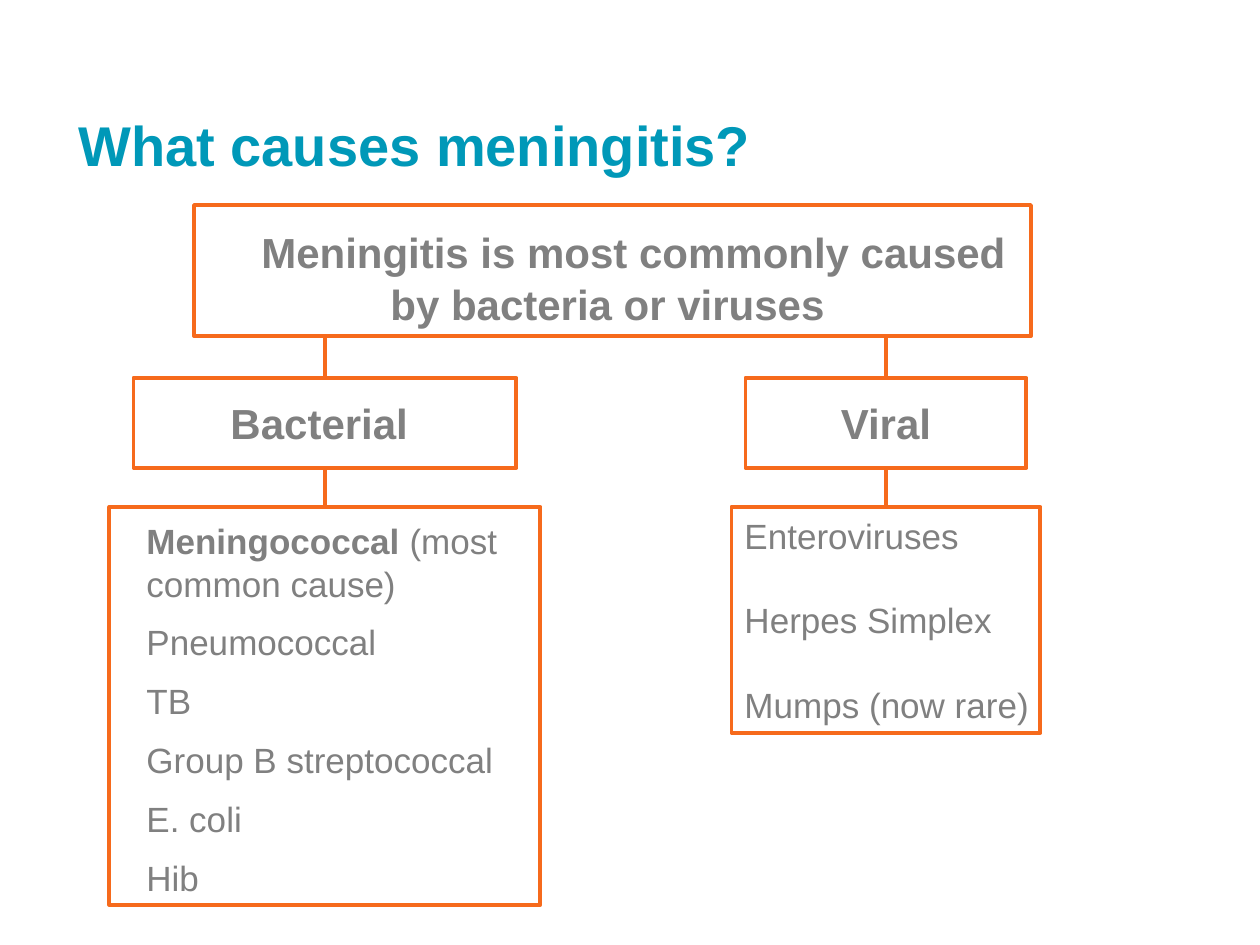
from lxml import etree
from pptx import Presentation
from pptx import util as u
from pptx.dml.color import RGBColor
from pptx.enum import shapes, text
from pptx.oxml import ns

TEAL = RGBColor(0x00, 0x98, 0xB8)
ORANGE = RGBColor(0xF6, 0x6A, 0x1C)
GREY = RGBColor(0x80, 0x80, 0x80)
FONT = "Arial"
TOP, LEFT, BOTTOM = 0, 1, 2

STATEMENT = "Meningitis is most commonly caused by bacteria or viruses"
BACTERIA = ["Meningococcal (most common cause)", "Pneumococcal", "TB",
            "Group B streptococcal", "E. coli", "Hib"]
VIRUSES = ["Enteroviruses", "Herpes Simplex", "Mumps (now rare)"]


def px(length):
    return u.Emu(round(length * 914400 / 126))


def style(run, size, color=GREY, bold=False):
    run.font.name = FONT
    run.font.size = u.Pt(size)
    run.font.bold = bold
    run.font.color.rgb = color


def set_margins(frame, left, top, right, bottom):
    frame.margin_left, frame.margin_top = px(left), px(top)
    frame.margin_right, frame.margin_bottom = px(right), px(bottom)


def add_title(slide, box, wording):
    frame = slide.shapes.add_textbox(*map(px, box)).text_frame
    frame.word_wrap = True
    frame.vertical_anchor = text.MSO_ANCHOR.MIDDLE
    frame.text = wording
    style(frame.paragraphs[0].runs[0], 32, TEAL, True)


def add_frame(slide, box):
    """Add an empty orange-outlined rectangle."""
    outline = slide.shapes.add_shape(shapes.MSO_SHAPE.RECTANGLE, *map(px, box))
    outline.shadow.inherit = False
    outline.fill.background()
    outline.line.color.rgb = ORANGE
    outline.line.width = u.Pt(2.25)
    outline.text_frame.word_wrap = True
    return outline


def add_heading(slide, box, wording):
    heading = add_frame(slide, box)
    frame = heading.text_frame
    frame.vertical_anchor = text.MSO_ANCHOR.MIDDLE
    frame.text = wording
    paragraph = frame.paragraphs[0]
    paragraph.alignment = text.PP_ALIGN.CENTER
    style(paragraph.runs[0], 24, bold=True)
    return heading


def add_statement(slide, box):
    """Add the top box, whose first line is indented."""
    statement = add_heading(slide, box, STATEMENT)
    frame = statement.text_frame
    frame.vertical_anchor = text.MSO_ANCHOR.TOP
    set_margins(frame, 13, 19, 23, 6)
    paragraph = frame.paragraphs[0]
    paragraph.line_spacing = u.Pt(30)
    properties = paragraph._p.get_or_add_pPr()
    properties.set("marL", "0")
    properties.set("indent", str(px(52)))


def add_causes(slide, box, causes, margins, gap):
    """Add a boxed list; gap is the space between items in points."""
    listing = add_frame(slide, box)
    frame = listing.text_frame
    frame.vertical_anchor = text.MSO_ANCHOR.TOP
    set_margins(frame, *margins)
    frame.text = "\n".join(causes)
    for index, paragraph in enumerate(frame.paragraphs):
        paragraph.alignment = text.PP_ALIGN.LEFT
        paragraph.line_spacing = u.Pt(24)
        paragraph.space_before = u.Pt(gap if index else 0)
        style(paragraph.runs[0], 20)
    return listing


def embolden_first_word(listing):
    paragraph = listing.text_frame.paragraphs[0]
    first, rest = paragraph.text.split(" ", 1)
    paragraph.runs[0].text = first + " "
    style(paragraph.runs[0], 20, bold=True)
    remainder = paragraph.add_run()
    remainder.text = rest
    style(remainder, 20)


def add_link(slide, x, top, bottom):
    link = slide.shapes.add_connector(
        shapes.MSO_CONNECTOR.STRAIGHT, px(x), px(top), px(x), px(bottom))
    link.line.color.rgb = ORANGE
    link.line.width = u.Pt(2.25)
    etree.SubElement(link._element.spPr, ns.qn("a:effectLst"))
    return link


def add_branch(slide, center, heading_width, wording, list_size, causes, margins, gap):
    """Add a heading and its list around a centre line, linked from above."""
    list_width, list_height = list_size
    heading = add_heading(
        slide, (center - heading_width / 2, 378, heading_width, 90), wording)
    listing = add_causes(
        slide, (center - list_width / 2, 507, list_width, list_height), causes, margins, gap)
    add_link(slide, center, 336, 378).end_connect(heading, TOP)
    lower = add_link(slide, center, 468, 507)
    lower.begin_connect(heading, BOTTOM)
    lower.end_connect(listing, TOP)
    return listing


def main():
    deck = Presentation()
    deck.slide_width, deck.slide_height = px(1260), px(945)
    slide = deck.slides.add_slide(deck.slide_layouts[6])
    add_title(slide, (66, 66, 1071, 157), "What causes meningitis?")
    add_statement(slide, (194, 205, 837, 131))
    bacterial = add_branch(slide, 325, 383, "Bacterial ", (431, 398),
                           BACTERIA, (37, 13, 13, 6), 9.6)
    embolden_first_word(bacterial)
    add_branch(slide, 886, 281, "Viral", (309, 226), VIRUSES, (13, 8, 0, 6), 24)
    deck.save("out.pptx")


if __name__ == "__main__":
    main()
